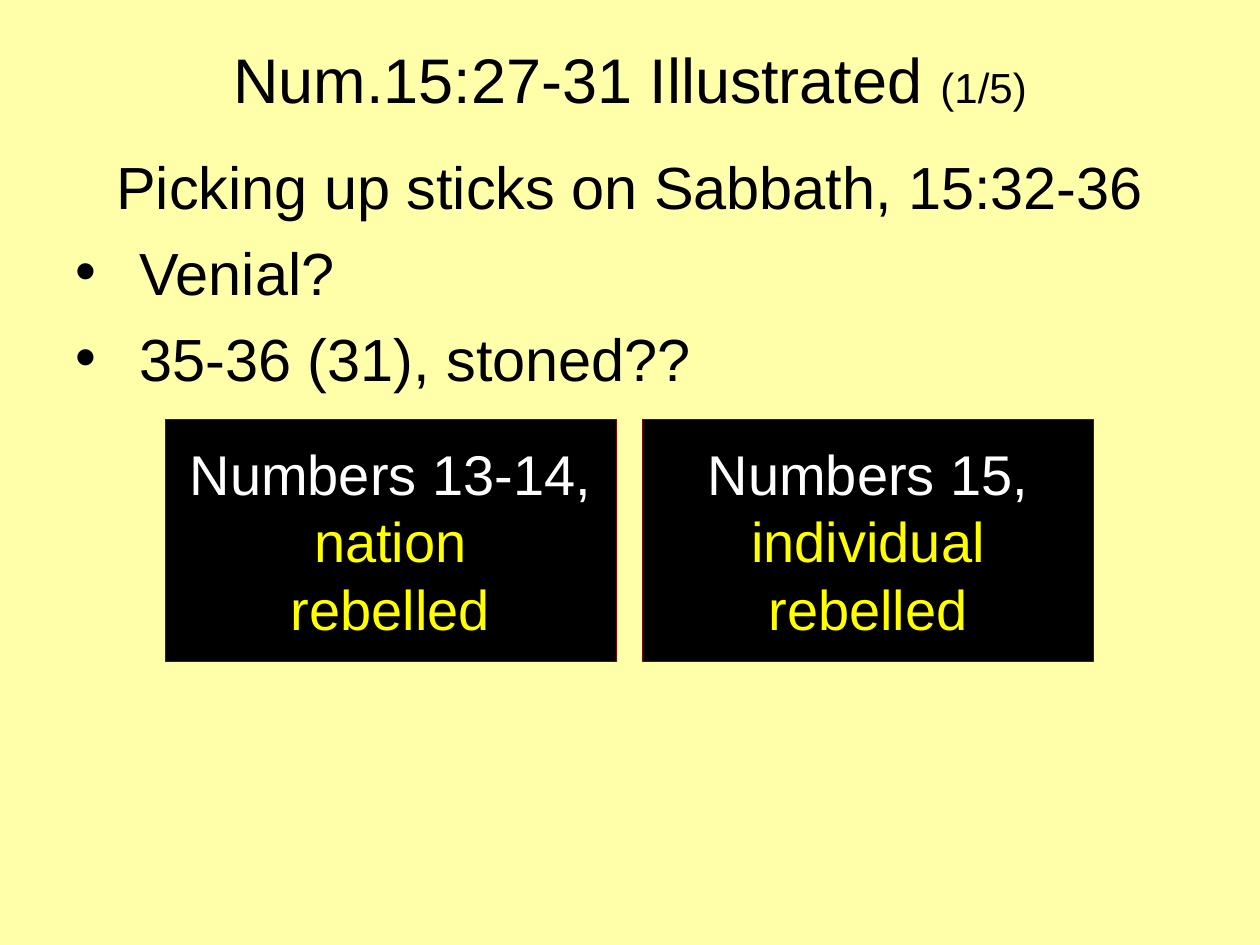
from lxml import etree
from pptx import Presentation
from pptx.dml.color import RGBColor
from pptx.enum.shapes import MSO_SHAPE
from pptx.enum.text import MSO_ANCHOR, PP_ALIGN
from pptx.oxml.ns import qn
from pptx.util import Inches, Pt

RECT = MSO_SHAPE.RECTANGLE
MIDDLE = MSO_ANCHOR.MIDDLE
CENTER = PP_ALIGN.CENTER
FONT = "Arial"


def rgb(value):
    """Return the colour for a hex string."""
    return RGBColor.from_string(value)


def place(shape, box):
    """Move and size a shape to a box given in inches."""
    shape.left, shape.top, shape.width, shape.height = map(Inches, box)


def style(font, size, color):
    """Set face, size and colour of a font."""
    font.name = FONT
    font.size = Pt(size)
    font.color.rgb = rgb(color)


def add_run(p, text, size, color):
    """Append a formatted run to a paragraph."""
    r = p.add_run()
    r.text = text
    style(r.font, size, color)


def add_bullet(p, indent):
    """Give a paragraph a round bullet with a hanging indent."""
    pPr = p._p.get_or_add_pPr()
    pPr.set("marL", str(Inches(indent)))
    pPr.set("indent", str(-Inches(indent)))
    etree.SubElement(pPr, qn("a:buFont")).set("typeface", FONT)
    etree.SubElement(pPr, qn("a:buChar")).set("char", "•")


def fill_title(s, box, text, part):
    """Place the title with its smaller part number."""
    title = s.shapes.title
    place(title, box)
    tf = title.text_frame
    tf.vertical_anchor = MIDDLE
    p = tf.paragraphs[0]
    p.alignment = CENTER
    add_run(p, text, 36, "000000")
    add_run(p, part, 24, "000000")


def add_body(s, box, heading, bullets):
    """Add a centred heading line with bullets below it."""
    tf = s.shapes.add_textbox(*map(Inches, box)).text_frame
    tf.word_wrap = True
    p = tf.paragraphs[0]
    p.alignment = CENTER
    add_run(p, heading, 34, "000000")
    for text in bullets:
        p = tf.add_paragraph()
        p.space_before = Pt(8.3)
        add_bullet(p, 0.51)
        add_run(p, text, 34, "000000")


def add_card(s, box, source, lines):
    """Add a black card with a white reference and yellow lines."""
    card = s.shapes.add_shape(RECT, *map(Inches, box))
    card.shadow.inherit = False
    card.fill.solid()
    card.fill.fore_color.rgb = rgb("000000")
    card.line.color.rgb = rgb("800000")
    card.line.width = Pt(0.25)
    tf = card.text_frame
    tf.word_wrap = True
    tf.vertical_anchor = MIDDLE
    p = tf.paragraphs[0]
    p.alignment = CENTER
    add_run(p, source + " ", 32, "FFFFFF")
    for i, line in enumerate(lines):
        if i:
            p.add_line_break()
        add_run(p, line, 32, "FFFF00")


def add_cards(s, box, gap, cards):
    """Spread cards evenly across a box."""
    left, top, width, height = box
    card_width = (width - gap * (len(cards) - 1)) / len(cards)
    for i, (source, lines) in enumerate(cards):
        x = left + i * (card_width + gap)
        add_card(s, (x, top, card_width, height), source, lines)


def main():
    """Build and save the slide."""
    prs = Presentation()
    prs.slide_width, prs.slide_height = Inches(10), Inches(7.5)
    s = prs.slides.add_slide(prs.slide_layouts[5])
    s.background.fill.solid()
    s.background.fill.fore_color.rgb = rgb("FFFFAA")
    fill_title(s, (0.5, 0, 9, 1.25), "Num.15:27-31 Illustrated ", "(1/5)")
    add_body(s, (0.5, 1.14, 9, 6.11), "Picking up sticks on Sabbath, 15:32-36",
             ["Venial?", "35-36 (31), stoned??"])
    add_cards(s, (1.31, 3.33, 7.37, 1.92), 0.21, [
        ("Numbers 13-14,", ["nation", "rebelled"]),
        ("Numbers 15,", ["individual", "rebelled"]),
    ])
    prs.save("out.pptx")


if __name__ == "__main__":
    main()
